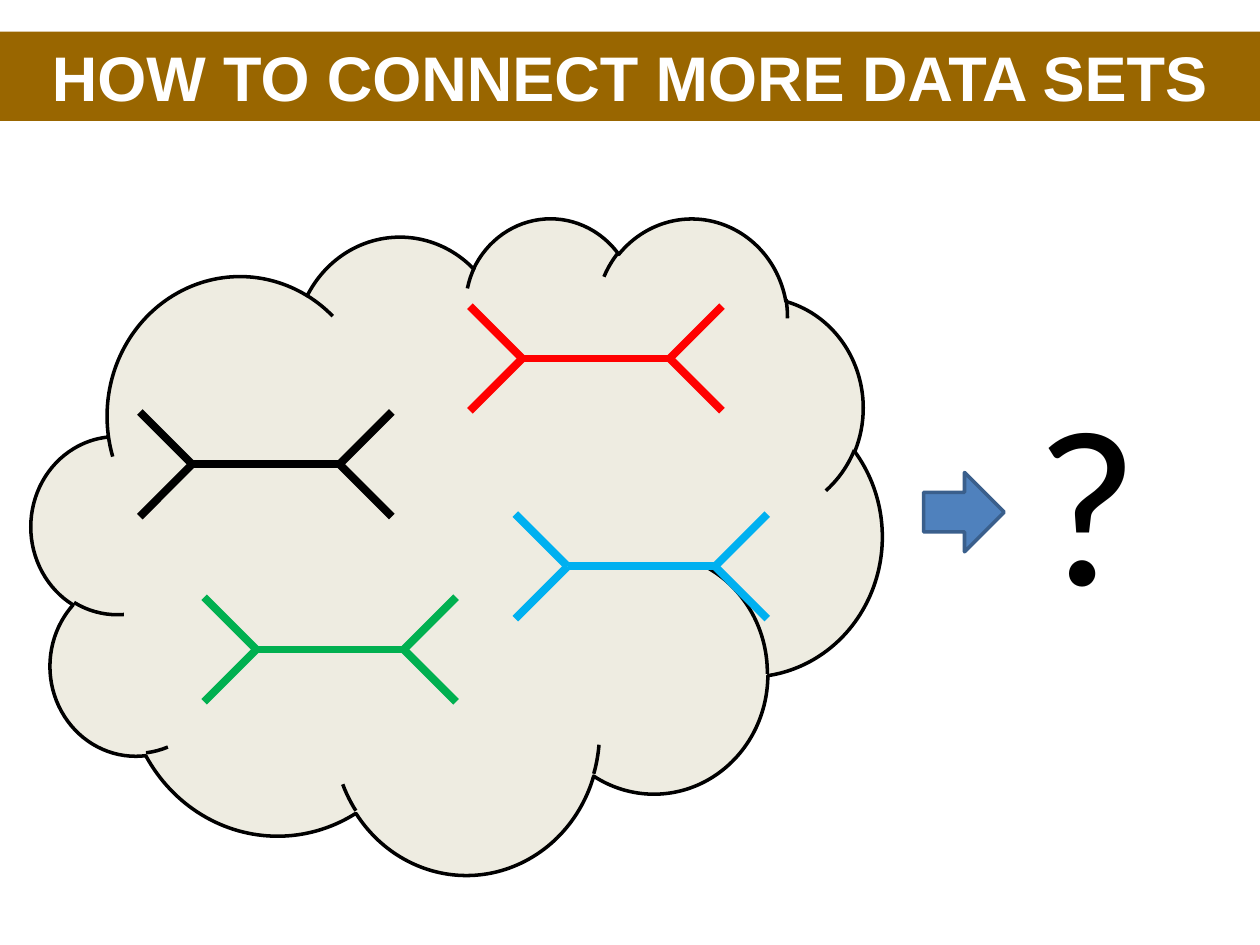
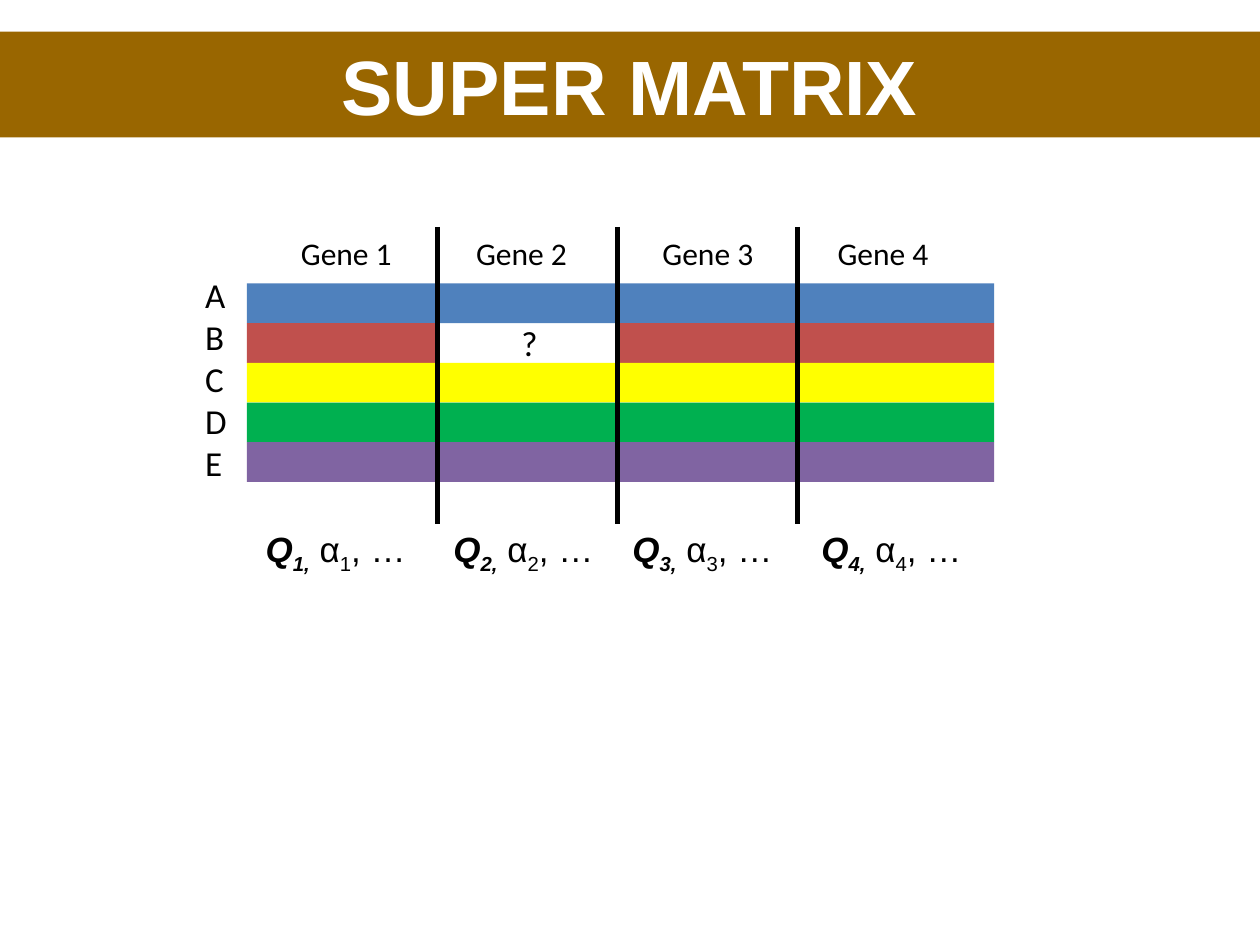
from itertools import pairwise

from pptx import Presentation
from pptx import util as u
from pptx.dml.color import RGBColor
from pptx.enum import shapes, text
from pptx.oxml.ns import qn
from lxml import etree

COLUMNS, ROWS = 100, 75  # square grid over the slide
BLACK, WHITE, BROWN = "000000", "FFFFFF", "996600"
BLUE, RED, YELLOW, GREEN, PURPLE = "4F81BD", "C0504D", "FFFF00", "00B050", "8064A2"


def colour(hex_string):
    return RGBColor.from_string(hex_string)


class Deck:
    """Holds the shared style and the slide being drawn."""

    def __init__(self):
        self.prs = Presentation()
        self.prs.slide_width, self.prs.slide_height = u.Inches(10), u.Inches(7.5)
        self.slide = None

    def x(self, columns):
        return round(self.prs.slide_width * columns / COLUMNS)

    def y(self, rows):
        return round(self.prs.slide_height * rows / ROWS)

    def box(self, left, top, width, height):
        return self.x(left), self.y(top), self.x(width), self.y(height)

    def add_slide(self, title, size, band_height):
        """Start a slide headed by a full-width title band."""
        self.slide = self.prs.slides.add_slide(self.prs.slide_layouts[5])
        band = self.slide.shapes.title
        band.left, band.top, band.width, band.height = self.box(0, 2.5, COLUMNS, band_height)
        band.fill.solid()
        band.fill.fore_color.rgb = colour(BROWN)
        frame = band.text_frame
        frame.auto_size = text.MSO_AUTO_SIZE.NONE
        frame.vertical_anchor = text.MSO_ANCHOR.MIDDLE
        frame.paragraphs[0].alignment = text.PP_ALIGN.CENTER
        self.run(frame.paragraphs[0], title, size, "Arial", WHITE, bold=True)

    def run(self, paragraph, words, size, font, ink=BLACK, bold=False, italic=False, sub=False):
        run = paragraph.add_run()
        run.text = words
        run.font.size, run.font.name = u.Pt(size), font
        run.font.bold, run.font.italic = bold, italic
        run.font.color.rgb = colour(ink)
        if sub:
            run._r.get_or_add_rPr().set("baseline", "-25000")

    def shape(self, kind, place, fill, line=None):
        shape = self.slide.shapes.add_shape(kind, *self.box(*place))
        shape.shadow.inherit = False
        shape.fill.solid()
        shape.fill.fore_color.rgb = colour(fill)
        if line:
            shape.line.color.rgb = colour(line)
            shape.line.width = u.Pt(2)
        else:
            shape.line.fill.background()

    def text_box(self, place, wrap=False):
        frame = self.slide.shapes.add_textbox(*self.box(*place)).text_frame
        frame.word_wrap = wrap
        return frame

    def label(self, place, lines, size, font):
        frame = self.text_box(place)
        for i, words in enumerate(lines):
            paragraph = frame.add_paragraph() if i else frame.paragraphs[0]
            self.run(paragraph, words, size, font)

    def line(self, start, end, ink, width, group=None):
        line = (group or self.slide).shapes.add_connector(
            shapes.MSO_CONNECTOR.STRAIGHT,
            self.x(start[0]), self.y(start[1]), self.x(end[0]), self.y(end[1]))
        line.line.color.rgb = colour(ink)
        line.line.width = u.Pt(width)
        etree.SubElement(line._element.spPr, qn("a:effectLst"))

    def tree(self, left, top, ink):
        """Unrooted four-taxon tree: one inner branch and four tips."""
        width, height, tip = 20, 8.3, 4.15
        right, bottom, middle = left + width, top + height, top + height / 2
        inner_left, inner_right = (left + tip, middle), (right - tip, middle)
        group = self.slide.shapes.add_group_shape()
        self.line(inner_left, inner_right, ink, 4.5, group)
        for level in (top, bottom):
            self.line((left, level), inner_left, ink, 4.5, group)
            self.line(inner_right, (right, level), ink, 4.5, group)

    def model(self, left, top, number):
        """Substitution model of one gene: rate matrix and gamma shape."""
        paragraph = self.text_box((left, top, 14.2, 4.4), wrap=True).paragraphs[0]
        self.run(paragraph, "Q", 20, "Arial", bold=True, italic=True)
        self.run(paragraph, f"{number},", 20, "Arial", bold=True, italic=True, sub=True)
        self.run(paragraph, " α", 20, "Arial")
        self.run(paragraph, f"{number}", 20, "Arial", sub=True)
        self.run(paragraph, ", …", 20, "Arial")


def connect_data_sets(deck):
    deck.add_slide("HOW TO CONNECT MORE DATA SETS", 36, 7.1)

    # Cloud of gene trees leading to an open question
    deck.shape(shapes.MSO_SHAPE.CLOUD, (2.5, 17.2, 67.5, 52.1), "EEECE1", BLACK)
    deck.shape(shapes.MSO_SHAPE.RIGHT_ARROW, (73.3, 37.5, 6.4, 6.3), BLUE, "3A5F8C")
    deck.label((81.6, 29.3, 9.3, 21.2), ["?"], 120, "Lato")

    # Gene trees
    for left, top, ink in ((16.2, 47.4, GREEN), (37.3, 24.3, "FF0000"),
                           (11.1, 32.7, BLACK), (40.9, 40.8, "00B0F0")):
        deck.tree(left, top, ink)


def super_matrix(deck):
    deck.add_slide("SUPER MATRIX", 44, 8.4)

    gene_edges = (19.6, 34.7, 49, 63.3, 78.9)
    first_row, row_height = 22.5, 3.15
    taxa = {"A": BLUE, "B": RED, "C": YELLOW, "D": GREEN, "E": PURPLE}
    missing_taxon, missing_gene = "B", 2

    # Sequences, one bar per taxon, broken where a gene is missing
    for row, (taxon, fill) in enumerate(taxa.items()):
        bar_ends = [gene_edges[0], gene_edges[-1]]
        if taxon == missing_taxon:
            bar_ends[1:1] = gene_edges[missing_gene - 1:missing_gene + 1]
        for start, end in zip(bar_ends[::2], bar_ends[1::2]):
            deck.shape(shapes.MSO_SHAPE.RECTANGLE,
                       (start, first_row + row * row_height, end - start, row_height), fill)
    deck.label((15.3, 21.2, 3.7, 17.8), taxa, 20, "Calibri")
    deck.label((40.4, 25, 3.3, 4.4), ["?"], 20, "Calibri")

    # Gene headings above and models below
    heading_lefts = (22.9, 36.8, 51.6, 65.5)
    model_lefts = (20.1, 35, 49.2, 64.2)
    for gene, (heading, model) in enumerate(zip(heading_lefts, model_lefts), 1):
        deck.label((heading, 18.1, 9.3, 4), [f"Gene {gene}"], 18, "Calibri")
        deck.model(model, 41.4, gene)

    # Gene boundaries
    for edge in gene_edges[1:-1]:
        deck.line((edge, 18), (edge, 41.6), BLACK, 3)


def main():
    deck = Deck()
    connect_data_sets(deck)
    super_matrix(deck)
    deck.prs.save("out.pptx")


if __name__ == "__main__":
    main()
